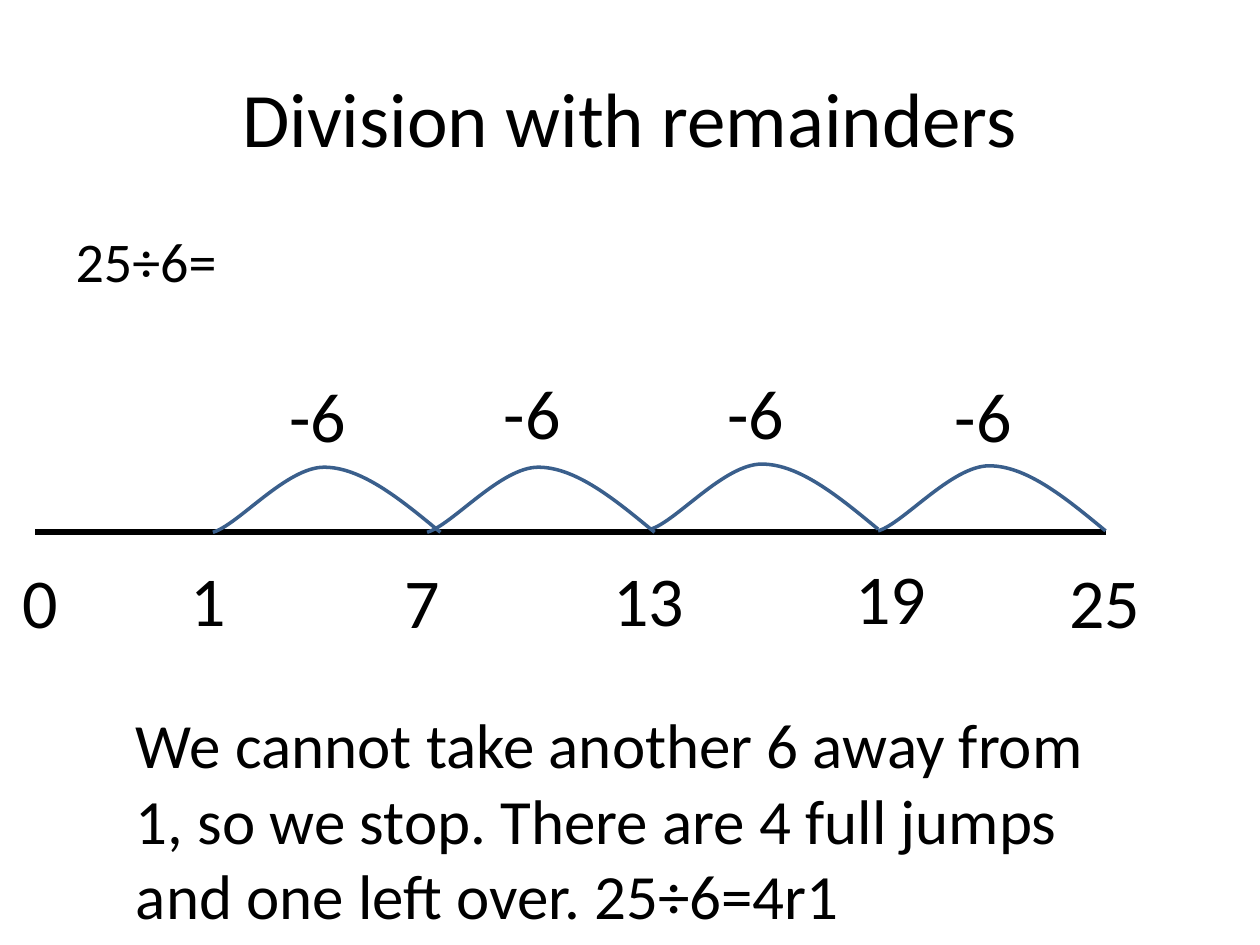
"""Builds a slide that shows division with remainders as jumps on a number line."""
from lxml import etree
from pptx import Presentation
from pptx.dml.color import RGBColor
from pptx.enum.shapes import MSO_CONNECTOR
from pptx.enum.text import MSO_ANCHOR, MSO_AUTO_SIZE, PP_ALIGN
from pptx.oxml.ns import qn
from pptx.util import Pt

STRAIGHT = MSO_CONNECTOR.STRAIGHT
MIDDLE = MSO_ANCHOR.MIDDLE
GROW = MSO_AUTO_SIZE.SHAPE_TO_FIT_TEXT
CENTER, LEFT = PP_ALIGN.CENTER, PP_ALIGN.LEFT

COLOURS = {"ink": "000000", "jump": "3A5F8C"}
FONT = "Calibri"
LABEL_SIZE = (57, 55.4)
JUMP_LABEL_INDENT = 36.7
JUMP_CURVE = [(130, 37.2), (107.5, 18.6), (85, 0), (63.5, 0), (42, 0), (14.5, 33), (0, 37.2)]

NUMBERS = [("0", 5.8, 315.4), ("1", 101.5, 314.6), ("7", 223.9, 315.4),
           ("13", 343.4, 314.6), ("19", 481.7, 313.2), ("25", 604.1, 315.4)]
JUMPS = [(121.7, 267, 209.5), (244.1, 267, 207.4),
         (371.8, 265.2, 207.4), (501.8, 266.2, 209.5)]
CONCLUSION = ("We cannot take another 6 away from 1, so we stop. "
              "There are 4 full jumps and one left over. 25÷6=4r1")


class NumberLineSlide:
    """Holds the slide and draws its elements in one style."""

    def __init__(self, slide, font, colours):
        self.slide = slide
        self.font = font
        self.colours = {name: RGBColor.from_string(value) for name, value in colours.items()}

    def set_wording(self, frame, wording, size, align=LEFT):
        frame.text = wording
        frame.word_wrap = True
        paragraph = frame.paragraphs[0]
        paragraph.alignment = align
        for run in paragraph.runs:
            run.font.name = self.font
            run.font.size = Pt(size)
            run.font.color.rgb = self.colours["ink"]
        return paragraph

    def place(self, shape, left, top, width, height):
        shape.left, shape.top, shape.width, shape.height = map(Pt, (left, top, width, height))

    def title(self, wording, *box):
        heading = self.slide.shapes.title
        self.place(heading, *box)
        self.set_wording(heading.text_frame, wording, 44, CENTER)
        heading.text_frame.vertical_anchor = MIDDLE

    def body(self, wording, *box):
        sum_body = self.slide.placeholders[1]
        self.place(sum_body, *box)
        paragraph = self.set_wording(sum_body.text_frame, wording, 32)
        paragraph.space_before = Pt(6.4)
        properties = paragraph._p.get_or_add_pPr()
        properties.set("marL", "0")
        properties.set("indent", "0")
        etree.SubElement(properties, qn("a:buNone"))

    def label(self, wording, left, top, width, height, size=40):
        box = self.slide.shapes.add_textbox(*map(Pt, (left, top, width, height)))
        self.set_wording(box.text_frame, wording, size)
        box.text_frame.auto_size = GROW

    def axis(self, start, end, height):
        line = self.slide.shapes.add_connector(STRAIGHT, Pt(start), Pt(height), Pt(end), Pt(height))
        line.line.color.rgb = self.colours["ink"]
        line.line.width = Pt(3)
        etree.SubElement(line._element.spPr, qn("a:effectLst"))

    def jump(self, left, top):
        points = [(Pt(left + x), Pt(top + y)) for x, y in JUMP_CURVE]
        builder = self.slide.shapes.build_freeform(*points[0])
        builder.add_line_segments(points[1:], close=False)
        arc = builder.convert_to_shape()
        self.curve(arc)
        arc.fill.background()
        arc.line.color.rgb = self.colours["jump"]
        arc.line.width = Pt(2)
        arc.shadow.inherit = False

    def curve(self, arc):
        outline = next(arc._element.iter(qn("a:path")))
        segments = outline.findall(qn("a:lnTo"))
        for first in range(0, len(segments), 3):
            bezier = etree.SubElement(outline, qn("a:cubicBezTo"))
            for segment in segments[first:first + 3]:
                bezier.append(segment[0])
                outline.remove(segment)


def main():
    deck = Presentation()
    deck.slide_width, deck.slide_height = Pt(720), Pt(540)
    page = NumberLineSlide(deck.slides.add_slide(deck.slide_layouts[1]), FONT, COLOURS)
    page.title("Division with remainders", 36, 21.6, 648, 90)
    page.body("25÷6=", 36, 126, 648, 356.4)
    page.axis(20.2, 632.2, 304)
    for left, top, label_top in JUMPS:
        page.jump(left, top)
        page.label("-6", left + JUMP_LABEL_INDENT, label_top, *LABEL_SIZE)
    for number, left, top in NUMBERS:
        page.label(number, left, top, *LABEL_SIZE)
    page.label(CONCLUSION, 70.6, 399.6, 561, 138.2, size=36)
    deck.save("out.pptx")


if __name__ == "__main__":
    main()
